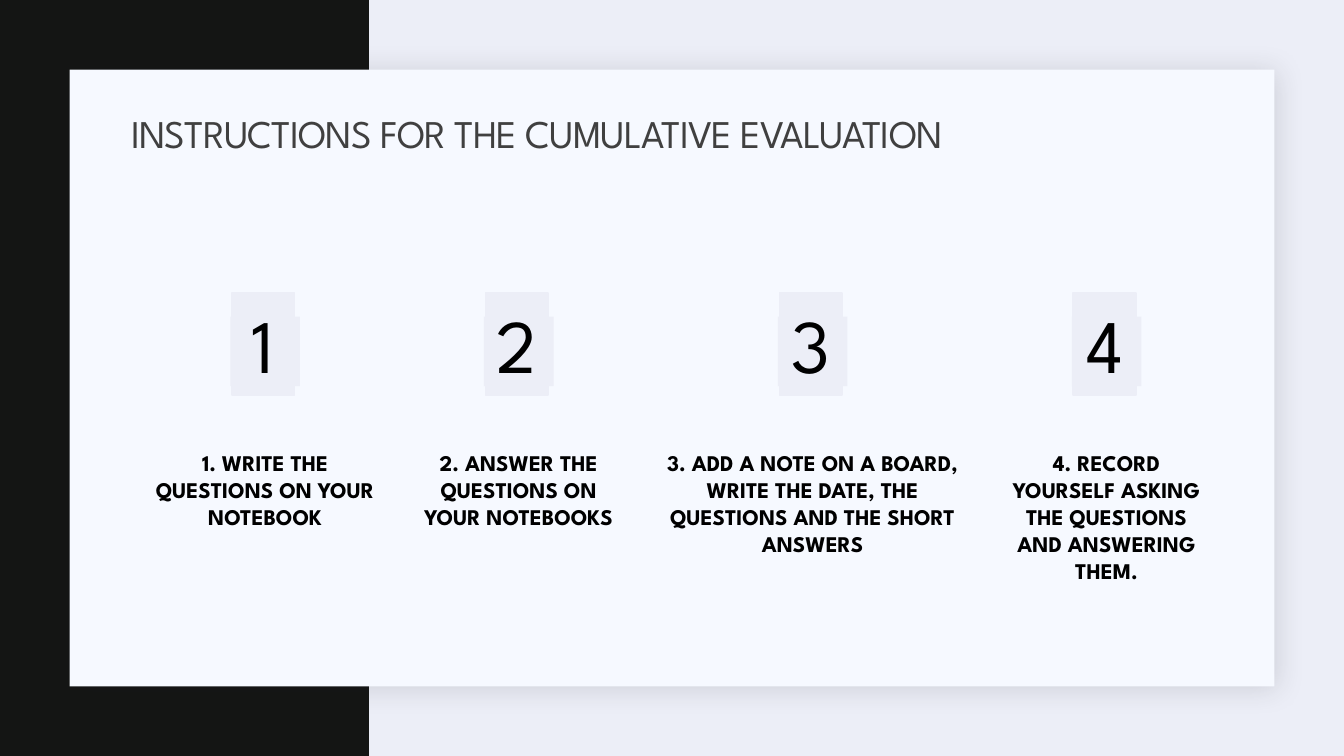
from dataclasses import dataclass

from lxml import etree
from pptx import Presentation
from pptx.dml.color import RGBColor
from pptx.enum.shapes import MSO_SHAPE
from pptx.enum.text import MSO_ANCHOR, MSO_AUTO_SIZE, PP_ALIGN
from pptx.oxml.ns import qn
from pptx.util import Inches, Pt

RECT = MSO_SHAPE.RECTANGLE
TOP, MIDDLE = MSO_ANCHOR.TOP, MSO_ANCHOR.MIDDLE
LEFT, CENTER = PP_ALIGN.LEFT, PP_ALIGN.CENTER
NO_FIT, GROW = MSO_AUTO_SIZE.NONE, MSO_AUTO_SIZE.SHAPE_TO_FIT_TEXT


@dataclass(frozen=True)
class Theme:
    font: str = "League Spartan"
    pale: str = "ECEEF7"
    dark: str = "141514"
    panel: str = "F6F9FF"
    shade: str = "1F2125"
    heading: str = "404040"
    ink: str = "000000"
    title_size: int = 28
    step_size: int = 16
    number_size: int = 54


THEME = Theme()
TITLE = "INSTRUCTIONS FOR THE CUMULATIVE EVALUATION"
# Text of each step and the width of its column
STEPS = [
    ("1. WRITE THE QUESTIONS ON YOUR NOTEBOOK", 2.36),
    ("2. ANSWER THE QUESTIONS ON YOUR NOTEBOOKS", 1.97),
    ("3. ADD A NOTE ON A BOARD, WRITE THE DATE, THE QUESTIONS AND THE SHORT ANSWERS", 3.16),
    ("4. RECORD YOURSELF ASKING THE QUESTIONS AND ANSWERING THEM.", 1.97),
]
GAP = 0.35


def add_rect(slide, x, y, w, h, color):
    rect = slide.shapes.add_shape(RECT, Inches(x), Inches(y), Inches(w), Inches(h))
    rect.shadow.inherit = False
    rect.fill.solid()
    rect.fill.fore_color.rgb = RGBColor.from_string(color)
    rect.line.fill.background()
    return rect


def set_text(frame, text, size, color, align, bold=False):
    frame.text = text
    para = frame.paragraphs[0]
    para.alignment = align
    font = para.runs[0].font
    font.name = THEME.font
    font.size = Pt(size)
    font.bold = bold
    font.color.rgb = RGBColor.from_string(color)
    return para


def add_shadow(shape):
    effects = shape._element.spPr.find(qn("a:effectLst"))
    shadow = etree.SubElement(effects, qn("a:outerShdw"), blurRad=str(Pt(20)),
                              dist=str(Pt(2)), dir=str(45 * 60000), rotWithShape="0")
    color = etree.SubElement(shadow, qn("a:srgbClr"), val=THEME.shade)
    etree.SubElement(color, qn("a:alpha"), val="15000")


def add_backdrop(slide, w, h):
    fill = slide.background.fill
    fill.solid()
    fill.fore_color.rgb = RGBColor.from_string(THEME.pale)
    add_rect(slide, 0, 0, 3.66, h, THEME.dark)
    margin = 0.69
    panel = add_rect(slide, margin, margin, w - 2 * margin, h - 2 * margin, THEME.panel)
    add_shadow(panel)


def place_title(slide, x, y, w, h):
    title = slide.shapes.title
    title.left, title.top = Inches(x), Inches(y)
    title.width, title.height = Inches(w), Inches(h)
    frame = title.text_frame
    frame.auto_size = NO_FIT
    frame.vertical_anchor = MIDDLE
    para = set_text(frame, TITLE, THEME.title_size, THEME.heading, LEFT)
    para.line_spacing = 0.9
    para.runs[0]._r.get_or_add_rPr().set("spc", "-50")
    # The title stands in front of the panel
    slide.shapes._spTree.append(title._element)


def add_step(slide, number, text, x, y, w):
    """Stack a numbered tile above its centred caption."""
    mid = x + w / 2
    side = 0.69
    add_rect(slide, mid - side / 2, y + 0.23, side, side, THEME.pale)

    tile = add_rect(slide, mid - 0.33, y, 0.62, 1.01, THEME.pale)
    tile.line.color.rgb = RGBColor.from_string(THEME.pale)
    tile.line.width = Pt(1.25)
    frame = tile.text_frame
    frame.word_wrap = False
    frame.auto_size = GROW
    frame.vertical_anchor = TOP
    set_text(frame, str(number), THEME.number_size, THEME.ink, CENTER)

    box = slide.shapes.add_textbox(Inches(x), Inches(y + 1.55), Inches(w), Inches(1.37))
    frame = box.text_frame
    frame.word_wrap = True
    frame.margin_left = frame.margin_right = 0
    frame.margin_top = frame.margin_bottom = 0
    set_text(frame, text, THEME.step_size, THEME.ink, CENTER, bold=True)


def add_steps(slide, x, y):
    for number, (text, w) in enumerate(STEPS, 1):
        add_step(slide, number, text, x, y, w)
        x += w + GAP


def main():
    deck = Presentation()
    w, h = 13.33, 7.5
    deck.slide_width, deck.slide_height = Inches(w), Inches(h)
    slide = deck.slides.add_slide(deck.slide_layouts.get_by_name("Title Only"))
    add_backdrop(slide, w, h)
    place_title(slide, 1.2, 1.03, 11, 0.64)
    add_steps(slide, 1.45, 2.91)
    deck.save("out.pptx")


if __name__ == "__main__":
    main()
